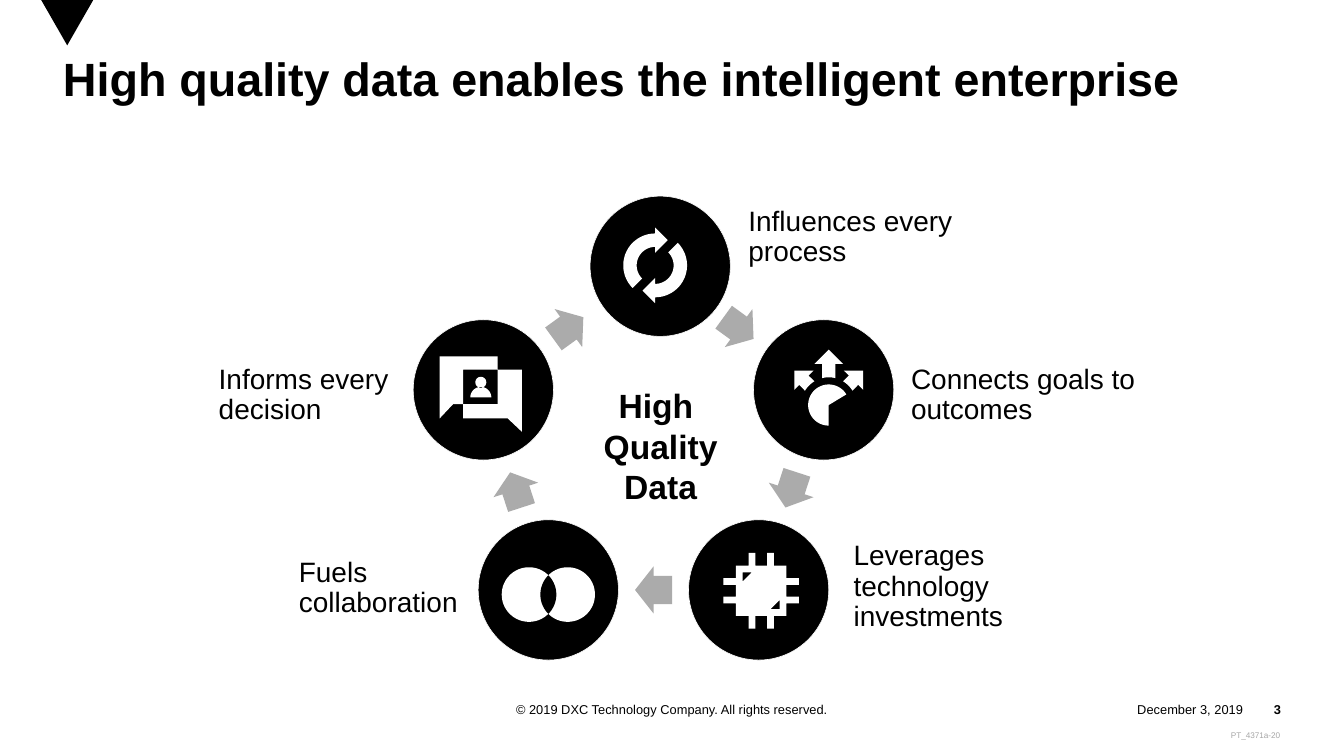
import math
import pptx
import pptx.dml.color
import pptx.enum.shapes
import pptx.enum.text
import pptx.util

Inches = pptx.util.Inches
Kind = pptx.enum.shapes.MSO_SHAPE
Align = pptx.enum.text.PP_ALIGN
Anchor = pptx.enum.text.MSO_ANCHOR
BLACK, WHITE, GREY = "000000", "FFFFFF", "ABABAB"


def tint(code):
    """Turn a hex string into a colour."""
    return pptx.dml.color.RGBColor.from_string(code)


def paint(shape, fill, line=None):
    """Give a shape a flat fill and an optional thin outline."""
    shape.shadow.inherit = False
    shape.fill.solid()
    shape.fill.fore_color.rgb = tint(fill)
    if line:
        shape.line.color.rgb = tint(line)
        shape.line.width = pptx.util.Pt(0.5)
    else:
        shape.line.fill.background()


def write(slide, box, text, size=24, color=BLACK, bold=False,
          align=Align.LEFT, anchor=Anchor.MIDDLE, space=1.0, wrap=True, pad=0):
    """Place text in a box; a list makes several paragraphs."""
    frame = slide.shapes.add_textbox(*map(Inches, box)).text_frame
    frame.word_wrap = wrap
    frame.vertical_anchor = anchor
    frame.margin_left = frame.margin_right = 0
    frame.margin_top = frame.margin_bottom = Inches(pad)
    for i, line in enumerate([text] if isinstance(text, str) else text):
        para = frame.add_paragraph() if i else frame.paragraphs[0]
        para.text = line
        para.alignment = align
        para.line_spacing = space
        for run in para.runs:
            run.font.name = "Arial"
            run.font.size = pptx.util.Pt(size)
            run.font.bold = bold
            run.font.color.rgb = tint(color)


def arc(radius, start, end, x=0, y=0):
    """List points along an arc, with angles clockwise from the right."""
    steps = max(8, int(abs(end - start) / 4))
    angles = [math.radians(start + (end - start) * i / steps) for i in range(steps + 1)]
    return [(x + radius * math.cos(a), y + radius * math.sin(a)) for a in angles]


def turn(points, angle):
    """Rotate points clockwise about zero."""
    c, s = math.cos(math.radians(angle)), math.sin(math.radians(angle))
    return [(x * c - y * s, x * s + y * c) for x, y in points]


def flip(points):
    """Mirror points left to right."""
    return [(-x, y) for x, y in points]


def draw(slide, x, y, *paths, fill=WHITE):
    """Draw closed outlines around a centre as one shape."""
    paths = [[(Inches(x + dx), Inches(y + dy)) for dx, dy in path] for path in paths]
    form = slide.shapes.build_freeform(*paths[0][0], scale=1.0)
    for i, path in enumerate(paths):
        if i:
            form.move_to(*path[0])
        form.add_line_segments(path[1:], close=True)
    paint(form.convert_to_shape(), fill)


def cycle(slide, x, y):
    """Draw two arrows chasing each other."""
    half = arc(0.38, 135, 270) + [(0, -0.45), (0.15, -0.3), (0, -0.15)] + arc(0.22, 270, 135)
    draw(slide, x - 0.06, y - 0.01, half, turn(half, 180))


def goals(slide, x, y):
    """Draw a pie with three arrows leaving it."""
    top = arc(0.33, 256, 284) + [(0.08, -0.49), (0.17, -0.49), (0, -0.66),
                                 (-0.17, -0.49), (-0.08, -0.49)]
    side = [(0.41, -0.41), (0.18, -0.41), (0.24, -0.35)] + arc(0.33, -59, -31) + [
        (0.35, -0.24), (0.41, -0.18)]
    pie = [(0, 0)] + arc(0.245, -31, -270)
    draw(slide, x + 0.06, y + 0.18, top, side, flip(side), pie)


def chip(slide, x, y):
    """Draw a chip with two pins on each side."""
    side = [(-0.3, -0.3), (-0.15, -0.3), (-0.15, -0.45), (-0.07, -0.45), (-0.07, -0.3),
            (0.07, -0.3), (0.07, -0.45), (0.15, -0.45), (0.15, -0.3)]
    edge = [point for k in range(4) for point in turn(side, 90 * k)]
    notch = [(-0.22, -0.11), (-0.22, -0.22), (-0.11, -0.22)]
    draw(slide, x + 0.03, y + 0.01, edge, notch, turn(notch, 180))


def rings(slide, x, y):
    """Draw two discs with a dark overlap."""
    y += 0.055
    draw(slide, x, y, arc(0.325, 0, 360, x=-0.23))
    draw(slide, x, y, arc(0.325, 0, 360, x=0.23))
    draw(slide, x, y, arc(0.325, -45, 45, x=-0.23) + arc(0.325, 135, 225, x=0.23), fill=BLACK)


def chat(slide, x, y):
    """Draw two speech bubbles around a person."""
    left = [(0.17, -0.24), (0.17, -0.4), (-0.52, -0.4), (-0.52, 0.34),
            (-0.36, 0.17), (-0.24, 0.17), (-0.24, -0.24)]
    right = [(0.17, -0.24), (0.17, 0.17), (-0.24, 0.17), (-0.24, 0.34),
             (0.29, 0.34), (0.46, 0.5), (0.46, -0.24)]
    head = arc(0.065, 0, 360, x=-0.03, y=-0.09)
    body = arc(0.125, 180, 360, x=-0.03, y=0.09)
    draw(slide, x, y, left, right, head, body)


NODES = [
    (cycle, "Influences every process", 0.08, (1.05, -0.71, 2.73, 0.73)),
    (goals, "Connects goals to outcomes", 0, (1.04, -0.3, 3.24, 0.73)),
    (chip, "Leverages technology\ninvestments", 0, (1.13, -0.58, 2.5, 1.09)),
    (rings, "Fuels collaboration", 0, (-2.97, -0.38, 2.17, 0.73)),
    (chat, "Informs every decision", 0, (-3.15, -0.3, 2.26, 0.73)),
]


def wheel(slide, left, top, size):
    """Place five nodes and arrows on a circle in a square box."""
    radius = size / 2
    mx, my = left + radius, top + radius
    for k, (icon, label, shift, (dx, dy, w, h)) in enumerate(NODES):
        x, y = turn([(0, -radius)], 72 * k)[0]
        x, y = mx + x + shift, my + y
        disc = slide.shapes.add_shape(
            Kind.OVAL, *map(Inches, (x - 0.835, y - 0.835, 1.67, 1.67)))
        paint(disc, BLACK, WHITE)
        icon(slide, x, y)
        write(slide, (x + dx, y + dy, w, h), label, space=0.9)
        angle = 36 + 72 * k
        ax, ay = turn([(0, -radius * math.cos(math.pi / 5))], angle)[0]
        arrow = slide.shapes.add_shape(
            Kind.RIGHT_ARROW, *map(Inches, (mx + ax - 0.22, my + ay - 0.28, 0.44, 0.56)))
        arrow.adjustments[0], arrow.adjustments[1] = 0.6, 0.5
        arrow.rotation = angle
        paint(arrow, GREY)
    write(slide, (mx - 1.4, my - 0.72, 2.97, 1.45), ["High ", "Quality\nData"],
          size=28.8, bold=True, align=Align.CENTER)


def header(slide, left, top, width, height):
    """Place the corner mark and the title."""
    draw(slide, left + 0.05, 0, [(-0.31, 0), (0.31, 0), (0, 0.54)], fill=BLACK)
    write(slide, (left, top, width, height),
          "High quality data enables the intelligent enterprise",
          size=40, bold=True, anchor=Anchor.TOP, space=0.85)


def footer(slide, left, top, width, height):
    """Place the rights line, date, page number and code."""
    right = left + width
    write(slide, (left + width / 2 - 2.75, top, 5.5, height),
          "© 2019 DXC Technology Company. All rights reserved.",
          size=11, align=Align.CENTER, wrap=False)
    write(slide, (right - 2.24, top, 1.79, height), "December 3, 2019",
          size=11, align=Align.RIGHT, wrap=False)
    write(slide, (right - 0.45, top, 0.45, height), "3",
          size=11, bold=True, align=Align.RIGHT)
    write(slide, (right - 2.24, top + 0.36, 2.23, 0.22), "PT_4371a-20",
          size=7, color="A6A6A6", align=Align.RIGHT, anchor=Anchor.TOP, pad=0.05)


def main():
    """Build and save the slide."""
    deck = pptx.Presentation()
    deck.slide_width, deck.slide_height = Inches(16), Inches(9)
    slide = deck.slides.add_slide(deck.slide_layouts[6])
    header(slide, 0.75, 0.7, 14.5, 1.55)
    wheel(slide, 5.65, 3.17, 4.26)
    footer(slide, 0.75, 8.29, 14.5, 0.3)
    deck.save("out.pptx")


if __name__ == "__main__":
    main()
